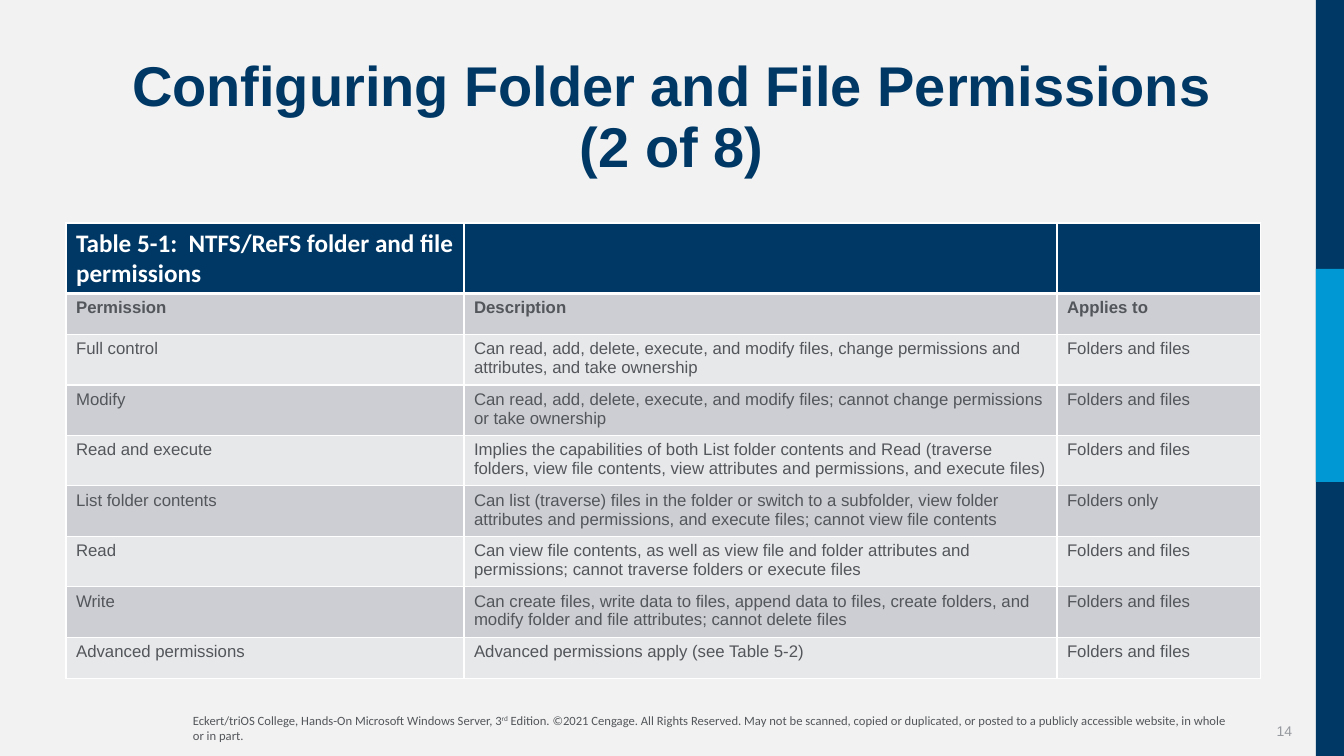
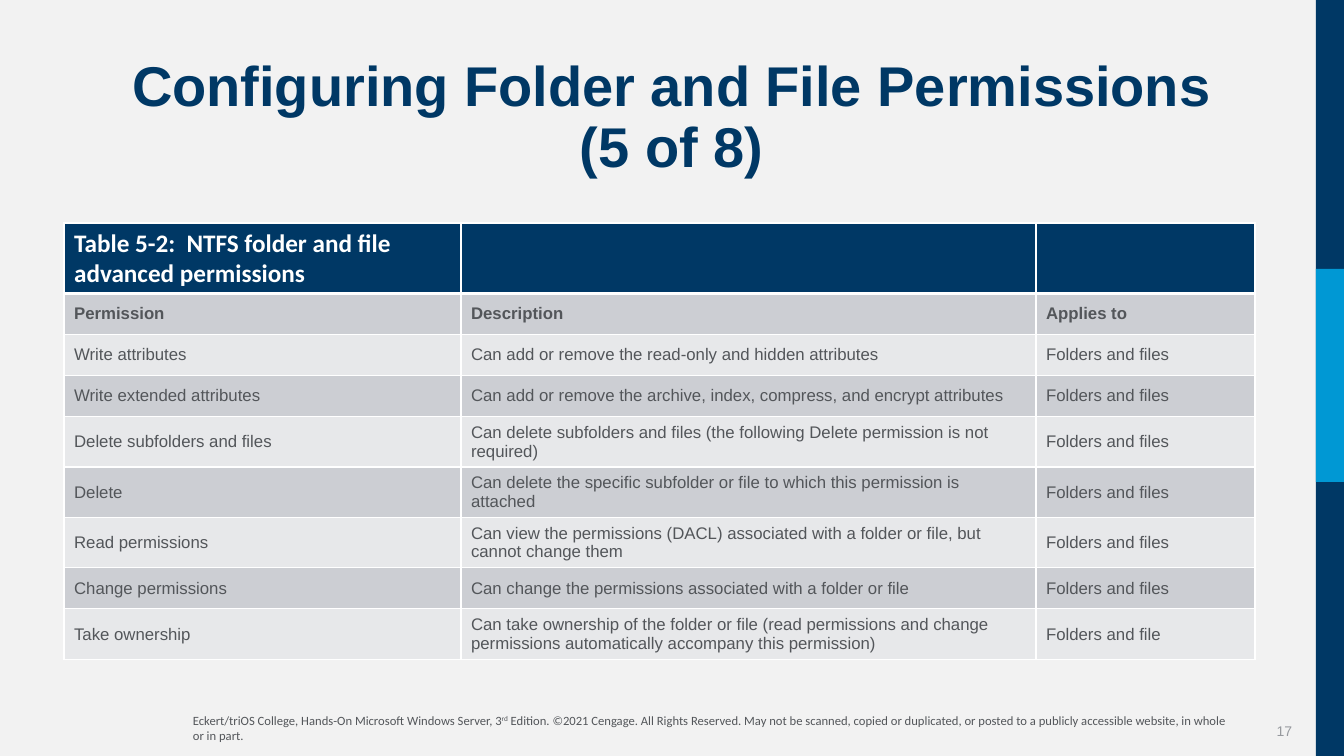
from lxml.etree import SubElement
from pptx import Presentation
from pptx.dml.color import RGBColor
from pptx.enum.shapes import MSO_SHAPE as Shape
from pptx.enum.text import MSO_ANCHOR as Anchor, MSO_AUTO_SIZE as AutoSize, PP_ALIGN as Align
from pptx.oxml.ns import qn
from pptx.util import Pt

SCALE = 914400 / 100.8
SLIDE_W, SLIDE_H = 1344, 756

PAPER, NAVY, SKY, WHITE = "F2F2F2", "003865", "0098D4", "FFFFFF"
INK, PALE = "53565A", "96999E"
BANDS = ["E7E8EA", "CCCED3"]

TITLE_FONT = {"name": "Arial", "size": Pt(40), "bold": True}
NUMBER_FONT = {"name": "Arial", "size": Pt(10)}
FOOTER_FONT = {"name": "Calibri", "size": Pt(9)}
CAPTION_FONT = {"name": "Calibri", "size": Pt(18), "bold": True}
HEADING_FONT = {"name": "Arial", "size": Pt(12), "bold": True}
BODY_FONT = {**HEADING_FONT, "bold": False}

TITLE_BOX = (52, 52, 1239, 134)
FOOTER_BOX = (183, 708, 1060, 40)
NUMBER_BOX = (1222, 711, 80, 40)
SIDE_BOX = (1316, 0, 28, SLIDE_H)
ROW_H = 41

FOOTER = [
    ("Eckert/triOS College, Hands-On Microsoft Windows Server, 3", 0),
    ("rd", 30000),
    (" Edition. ©2021 Cengage. All Rights Reserved. May not be scanned, copied or "
     "duplicated, or posted to a publicly accessible website, in whole or in part.", 0),
]
HEADINGS = ("Permission", "Description", "Applies to")
BOTH = "Folders and files"

BASIC_PERMISSIONS = [
    ("Full control", "Can read, add, delete, execute, and modify files, change permissions "
     "and attributes, and take ownership", BOTH),
    ("Modify", "Can read, add, delete, execute, and modify files; cannot change permissions "
     "or take ownership", BOTH),
    ("Read and execute", "Implies the capabilities of both List folder contents and Read "
     "(traverse folders, view file contents, view attributes and permissions, and execute "
     "files)", BOTH),
    ("List folder contents", "Can list (traverse) files in the folder or switch to a subfolder, "
     "view folder attributes and permissions, and execute files; cannot view file contents",
     "Folders only"),
    ("Read", "Can view file contents, as well as view file and folder attributes and "
     "permissions; cannot traverse folders or execute files", BOTH),
    ("Write", "Can create files, write data to files, append data to files, create folders, "
     "and modify folder and file attributes; cannot delete files", BOTH),
    ("Advanced permissions", "Advanced permissions apply (see Table 5-2)", BOTH),
]
ADVANCED_PERMISSIONS = [
    ("Write attributes", "Can add or remove the read-only and hidden attributes", BOTH),
    ("Write extended attributes", "Can add or remove the archive, index, compress, and encrypt "
     "attributes", BOTH),
    ("Delete subfolders and files", "Can delete subfolders and files (the following Delete "
     "permission is not required)", BOTH),
    ("Delete", "Can delete the specific subfolder or file to which this permission is attached",
     BOTH),
    ("Read permissions", "Can view the permissions (DACL) associated with a folder or file, "
     "but cannot change them", BOTH),
    ("Change permissions", "Can change the permissions associated with a folder or file", BOTH),
    ("Take ownership", "Can take ownership of the folder or file (read permissions and change "
     "permissions automatically accompany this permission)", "Folders and file"),
]


def px(length):
    return round(length * SCALE)


def paint(color_format, color):
    color_format.rgb = RGBColor.from_string(color)


def fill_with(area, color):
    area.fill.solid()
    paint(area.fill.fore_color, color)


def apply(target, values):
    for key, value in values.items():
        setattr(target, key, value)


def set_font(font, values, color):
    apply(font, values)
    paint(font.color, color)


def place(box):
    return [px(length) for length in box]


def add_title(slide, box, text):
    title = slide.shapes.title
    apply(title, dict(zip(("left", "top", "width", "height"), place(box))))
    frame = title.text_frame
    frame.text = text
    apply(frame, {"word_wrap": True, "auto_size": AutoSize.NONE,
                  "vertical_anchor": Anchor.MIDDLE})
    line = frame.paragraphs[0]
    apply(line, {"alignment": Align.CENTER, "line_spacing": 0.9})
    for run in line.runs:
        set_font(run.font, TITLE_FONT, NAVY)


def add_side_band(slide, box):
    left, top, width, height = box
    accent = (left, top + 269, width, 213)
    for part, color in ((box, NAVY), (accent, SKY)):
        band = slide.shapes.add_shape(Shape.RECTANGLE, *place(part))
        band.shadow.inherit = False
        fill_with(band, color)
        band.line.fill.background()


def add_footer(slide, box):
    frame = slide.shapes.add_textbox(*place(box)).text_frame
    frame.word_wrap = True
    for text, baseline in FOOTER:
        run = frame.paragraphs[0].add_run()
        run.text = text
        set_font(run.font, FOOTER_FONT, INK)
        if baseline:
            run.font._element.set("baseline", str(baseline))


def add_number(slide, box, number):
    frame = slide.shapes.add_textbox(*place(box)).text_frame
    apply(frame, {"word_wrap": True, "vertical_anchor": Anchor.MIDDLE})
    line = frame.paragraphs[0]
    line.alignment = Align.RIGHT
    run = line.add_run()
    run.text = str(number)
    set_font(run.font, NUMBER_FONT, PALE)


def add_borders(cell, widths):
    properties = cell._tc.get_or_add_tcPr()
    for side, width in widths.items():
        border = SubElement(properties, qn(f"a:ln{side}"), w=str(Pt(width)))
        fill = SubElement(border, qn("a:solidFill"))
        SubElement(fill, qn("a:srgbClr"), val=WHITE)


def add_permissions(slide, corner, widths, caption, permissions, anchor):
    rows = [(caption, "", ""), HEADINGS, *permissions]
    box = (*corner, sum(widths), ROW_H * len(rows))
    table = slide.shapes.add_table(len(rows), len(widths), *place(box)).table
    table.horz_banding = False
    for column, width in zip(table.columns, widths):
        column.width = px(width)
    for r, texts in enumerate(rows):
        table.rows[r].height = px(ROW_H)
        font = (CAPTION_FONT, HEADING_FONT)[r] if r < 2 else BODY_FONT
        for c, text in enumerate(texts):
            cell = table.cell(r, c)
            add_borders(cell, {"L": 1, "R": 1, "T": 3 if r == 1 else 1, "B": 1 if r else 3})
            fill_with(cell, BANDS[r % 2] if r else NAVY)
            cell.vertical_anchor = anchor if r else Anchor.TOP
            line = cell.text_frame.paragraphs[0]
            line.text = text
            set_font(line.font, font, INK if r else WHITE)
            for run in line.runs:
                set_font(run.font, font, INK if r else WHITE)


def add_permission_slide(deck, number, part, **content):
    slide = deck.slides.add_slide(deck.slide_layouts[5])
    add_number(slide, NUMBER_BOX, number)
    add_footer(slide, FOOTER_BOX)
    add_side_band(slide, SIDE_BOX)
    add_title(slide, TITLE_BOX, f"Configuring Folder and File Permissions\v({part} of 8)")
    add_permissions(slide, **content)


def main():
    deck = Presentation()
    apply(deck, {"slide_width": px(SLIDE_W), "slide_height": px(SLIDE_H)})
    fill_with(deck.slide_master.background, PAPER)
    add_permission_slide(
        deck, 14, 2, corner=(66, 223), widths=(398, 593, 204),
        caption="Table 5-1:  NTFS/ReFS folder and file permissions",
        permissions=BASIC_PERMISSIONS, anchor=Anchor.TOP)
    add_permission_slide(
        deck, 17, 5, corner=(64, 223), widths=(397, 575, 219),
        caption="Table 5-2:  NTFS folder and file advanced permissions",
        permissions=ADVANCED_PERMISSIONS, anchor=Anchor.MIDDLE)
    deck.save("out.pptx")


if __name__ == "__main__":
    main()
